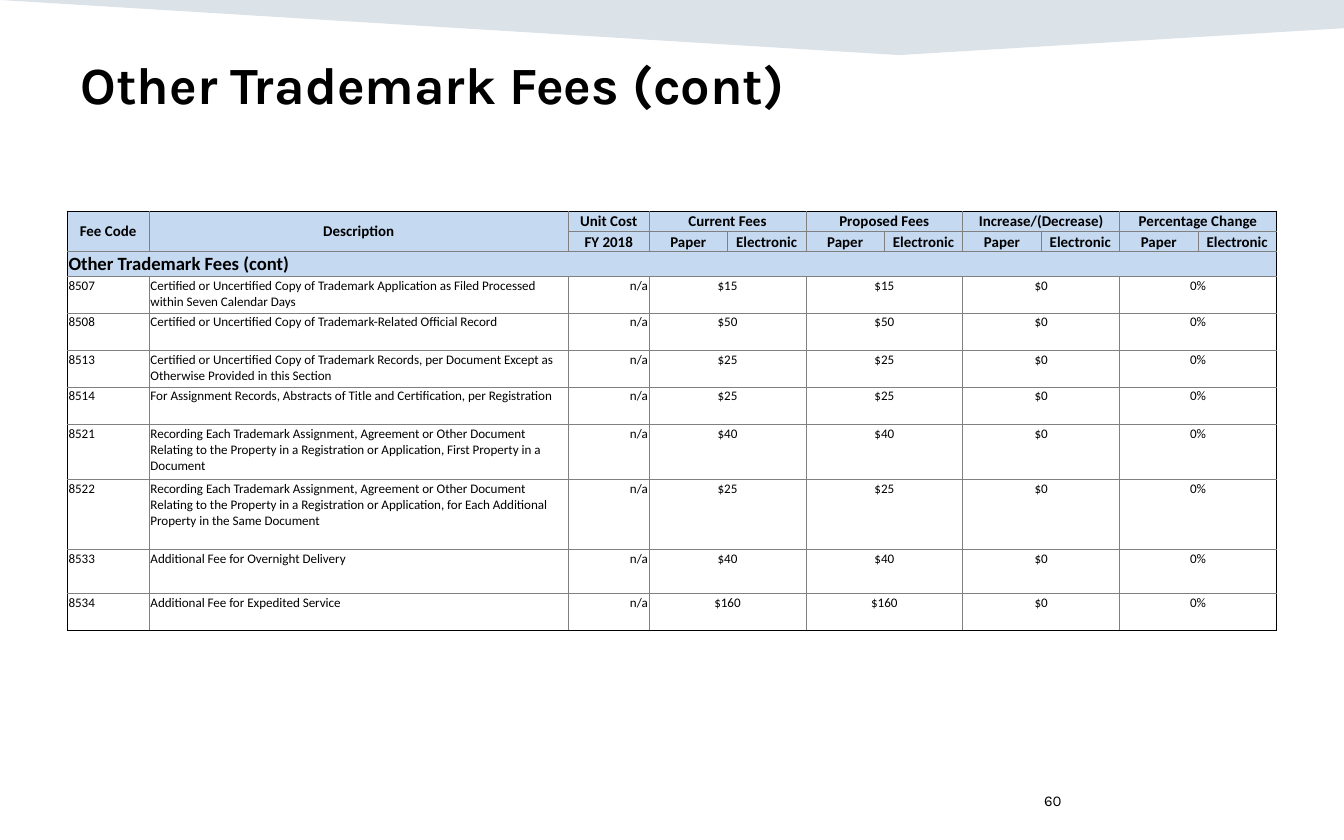
"""Build the slide that lists the remaining trademark fees."""
from lxml import etree
from pptx import Presentation
from pptx.dml.color import RGBColor
from pptx.enum import text
from pptx.oxml import ns
from pptx.util import Inches, Pt

BLACK = RGBColor(0x00, 0x00, 0x00)
GRAY = RGBColor(0x80, 0x80, 0x80)
BLUE = RGBColor(0xC5, 0xD9, 0xF1)
NAVY = RGBColor(0x16, 0x44, 0x69)
LEFT, MID, RIGHT = text.PP_ALIGN.LEFT, text.PP_ALIGN.CENTER, text.PP_ALIGN.RIGHT
TOP, MIDDLE, BOTTOM = (text.MSO_ANCHOR.TOP, text.MSO_ANCHOR.MIDDLE,
                       text.MSO_ANCHOR.BOTTOM)


def style(par, name, size, bold, align):
    par.alignment = align
    par.font.name, par.font.size, par.font.bold = name, Pt(size), bold
    par.font.color.rgb = BLACK


def edge(cell, side, color):
    line = etree.SubElement(cell._tc.get_or_add_tcPr(), ns.qn("a:ln" + side),
                            w=str(Pt(0.5)))
    fill = etree.SubElement(line, ns.qn("a:solidFill"))
    etree.SubElement(fill, ns.qn("a:srgbClr"), val=str(color))


deck = Presentation()
deck.slide_width, deck.slide_height = Inches(10), Inches(6.25)
slide = deck.slides.add_slide(deck.slide_layouts[5])

pen = slide.shapes.build_freeform(0, 0, scale=Inches(0.01))
pen.add_line_segments([(1000, 0), (1000, 21), (669, 41)], close=True)
band = pen.convert_to_shape()
band.shadow.inherit = False
band.line.fill.background()
band.fill.solid()
band.fill.fore_color.rgb = NAVY
tint = band._element.spPr.find(".//" + ns.qn("a:srgbClr"))
etree.SubElement(tint, ns.qn("a:alpha"), val="15000")

title = slide.shapes.title
title.left, title.top = Inches(0.5), Inches(0.34)
title.width, title.height = Inches(7.33), Inches(0.64)
frame = title.text_frame
frame.text = "Other Trademark Fees (cont)"
frame.auto_size = text.MSO_AUTO_SIZE.NONE
frame.vertical_anchor = TOP
style(frame.paragraphs[0], "Karla", 28, True, LEFT)

page = slide.shapes.add_textbox(Inches(7.67), Inches(5.79), Inches(2.33), Inches(0.33))
page.text_frame.word_wrap = True
page.text_frame.vertical_anchor = MIDDLE
page.text_frame.text = "60"
style(page.text_frame.paragraphs[0], "Karla", 8, False, LEFT)

fees = [
    ("8507", "Certified or Uncertified Copy of Trademark Application as Filed "
     "Processed within Seven Calendar Days", "$15"),
    ("8508", "Certified or Uncertified Copy of Trademark-Related Official Record", "$50"),
    ("8513", "Certified or Uncertified Copy of Trademark Records, per Document "
     "Except as Otherwise Provided in this Section", "$25"),
    ("8514", "For Assignment Records, Abstracts of Title and Certification, "
     "per Registration", "$25"),
    ("8521", "Recording Each Trademark Assignment, Agreement or Other Document "
     "Relating to the Property in a Registration or Application, "
     "First Property in a Document", "$40"),
    ("8522", "Recording Each Trademark Assignment, Agreement or Other Document "
     "Relating to the Property in a Registration or Application, "
     "for Each Additional Property in the Same Document", "$25"),
    ("8533", "Additional Fee for Overnight Delivery", "$40"),
    ("8534", "Additional Fee for Expedited Service", "$160"),
]
rows = [
    ["Fee Code", "Description", "Unit Cost", "Current Fees", "", "Proposed Fees", "",
     "Increase/(Decrease)", "", "Percentage Change", ""],
    ["", "", "FY 2018"] + ["Paper", "Electronic"] * 4,
    ["Other Trademark Fees (cont)"] + [""] * 10,
]
for code, label, fee in fees:
    rows.append([code, label, "n/a", fee, "", fee, "", "$0", "", "0%", ""])

count = len(rows)
wide = [0.61, 3.12, 0.6]
wide += [(9 - sum(wide)) / 8] * 8
high = [0.15, 0.15, 0.19, 0.27, 0.28, 0.27, 0.28, 0.41, 0.52, 0.33, 0.27]
grid = slide.shapes.add_table(count, 11, Inches(0.5), Inches(1.57),
                              Inches(9), Inches(3.12)).table
grid.first_row = grid.horz_banding = False
for col, size in zip(grid.columns, wide):
    col.width = Inches(size)
for row, size in zip(grid.rows, high):
    row.height = Inches(size)

for c in (0, 1):
    grid.cell(0, c).merge(grid.cell(1, c))
grid.cell(2, 0).merge(grid.cell(2, 10))
for r in [0, *range(3, count)]:
    for c in range(3, 11, 2):
        grid.cell(r, c).merge(grid.cell(r, c + 1))

for r, row in enumerate(rows):
    for c, word in enumerate(row):
        cell = grid.cell(r, c)
        cell.margin_left = cell.margin_right = cell.margin_top = Inches(0.01)
        cell.margin_bottom = 0
        outer = {"L": c == 0, "R": c + cell.span_width == 11,
                 "T": r == 0, "B": r + cell.span_height == count}
        for side, rim in outer.items():
            edge(cell, side, BLACK if rim else GRAY)
        if r < 3:
            cell.fill.solid()
            cell.fill.fore_color.rgb = BLUE
        else:
            cell.fill.background()
        if r < 2:
            cell.vertical_anchor = BOTTOM if r == 1 and c > 2 else MIDDLE
            size, align = 8, MID
        else:
            cell.vertical_anchor = TOP
            size = 10 if r == 2 else 7
            align = LEFT if c < 2 else RIGHT if c == 2 else MID
        if word:
            cell.text = word
        style(cell.text_frame.paragraphs[0], "Calibri", size, r < 3, align)

deck.save("out.pptx")
